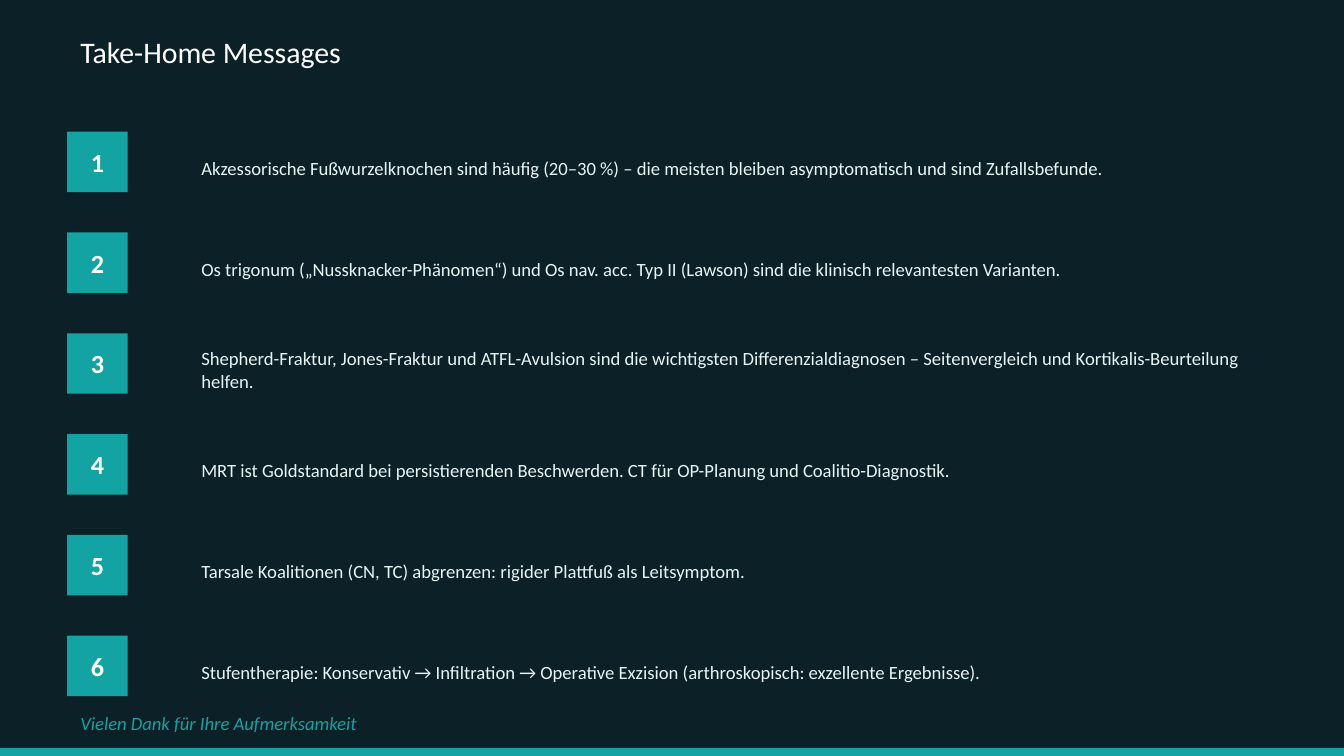
from dataclasses import dataclass

from pptx import Presentation
from pptx.dml.color import RGBColor
from pptx.enum.shapes import MSO_SHAPE
from pptx.enum.text import MSO_ANCHOR, MSO_AUTO_SIZE, PP_ALIGN
from pptx.util import Inches, Pt

RECTANGLE = MSO_SHAPE.RECTANGLE
TOP, MIDDLE = MSO_ANCHOR.TOP, MSO_ANCHOR.MIDDLE
LEFT, CENTER = PP_ALIGN.LEFT, PP_ALIGN.CENTER
GROW = MSO_AUTO_SIZE.SHAPE_TO_FIT_TEXT

COLORS = {
    "background": "0B2027",
    "accent": "14A3A3",
    "heading": "FFFFFF",
    "body": "E8F5F5",
}
FONT = "Calibri"

SLIDE_WIDTH = 10
SLIDE_HEIGHT = SLIDE_WIDTH * 9 / 16
MARGIN = 0.05 * SLIDE_WIDTH
CONTENT_WIDTH = SLIDE_WIDTH - 2 * MARGIN
FOOTER_BAR_HEIGHT = 0.06

FIRST_ROW_TOP = 0.95
ROW_PITCH = 0.75
ROW_HEIGHT = 0.6
BADGE_SIZE = 0.45
BADGE_OFFSET = 0.03
MESSAGE_LEFT = 1.4

MESSAGES = [
    "Akzessorische Fußwurzelknochen sind häufig (20–30 %) – die meisten bleiben "
    "asymptomatisch und sind Zufallsbefunde.",
    "Os trigonum („Nussknacker-Phänomen“) und Os nav. acc. Typ II (Lawson) sind "
    "die klinisch relevantesten Varianten.",
    "Shepherd-Fraktur, Jones-Fraktur und ATFL-Avulsion sind die wichtigsten "
    "Differenzialdiagnosen – Seitenvergleich und Kortikalis-Beurteilung helfen.",
    "MRT ist Goldstandard bei persistierenden Beschwerden. CT für OP-Planung und "
    "Coalitio-Diagnostik.",
    "Tarsale Koalitionen (CN, TC) abgrenzen: rigider Plattfuß als Leitsymptom.",
    "Stufentherapie: Konservativ → Infiltration → Operative Exzision "
    "(arthroskopisch: exzellente Ergebnisse).",
]


@dataclass(frozen=True)
class Area:
    left: float
    top: float
    width: float
    height: float

    def emu(self) -> list[int]:
        return [Inches(v) for v in (self.left, self.top, self.width, self.height)]


@dataclass(frozen=True)
class TakeHome:
    number: int
    message: str

    @property
    def top(self) -> float:
        return FIRST_ROW_TOP + (self.number - 1) * ROW_PITCH


def add_block(slide, area: Area, color: str) -> None:
    block = slide.shapes.add_shape(RECTANGLE, *area.emu())
    block.shadow.inherit = False
    block.fill.solid()
    block.fill.fore_color.rgb = RGBColor.from_string(COLORS[color])
    block.line.fill.background()


def add_text(slide, area: Area, text: str, *, size: float = 10, color: str = "body",
             bold: bool = False, italic: bool = False, align=LEFT, anchor=TOP,
             wrap: bool = True) -> None:
    frame = slide.shapes.add_textbox(*area.emu()).text_frame
    frame.word_wrap = wrap
    frame.auto_size = GROW
    frame.vertical_anchor = anchor
    paragraph = frame.paragraphs[0]
    paragraph.alignment = align
    run = paragraph.add_run()
    run.text = text
    run.font.name = FONT
    run.font.size = Pt(size)
    run.font.bold = bold
    run.font.italic = italic
    run.font.color.rgb = RGBColor.from_string(COLORS[color])


def add_take_home(slide, item: TakeHome) -> None:
    badge = Area(MARGIN, item.top + BADGE_OFFSET, BADGE_SIZE, BADGE_SIZE)
    add_block(slide, badge, "accent")
    add_text(slide, badge, str(item.number), size=14, color="heading", bold=True,
             align=CENTER, anchor=MIDDLE, wrap=False)
    message_width = SLIDE_WIDTH - MARGIN - MESSAGE_LEFT
    add_text(slide, Area(MESSAGE_LEFT, item.top, message_width, ROW_HEIGHT),
             item.message, anchor=MIDDLE)


def main() -> None:
    deck = Presentation()
    deck.slide_width = Inches(SLIDE_WIDTH)
    deck.slide_height = Inches(SLIDE_HEIGHT)
    slide = deck.slides.add_slide(deck.slide_layouts[6])
    slide.background.fill.solid()
    slide.background.fill.fore_color.rgb = RGBColor.from_string(COLORS["background"])

    add_block(slide, Area(0, SLIDE_HEIGHT - FOOTER_BAR_HEIGHT, SLIDE_WIDTH,
                          FOOTER_BAR_HEIGHT), "accent")
    add_text(slide, Area(MARGIN, 0.2, CONTENT_WIDTH, 0.6), "Take-Home Messages",
             size=16, color="heading")
    for number, message in enumerate(MESSAGES, start=1):
        add_take_home(slide, TakeHome(number, message))
    add_text(slide, Area(MARGIN, 5.25, CONTENT_WIDTH, 0.3),
             "Vielen Dank für Ihre Aufmerksamkeit", color="accent", italic=True)

    deck.save("out.pptx")


if __name__ == "__main__":
    main()
